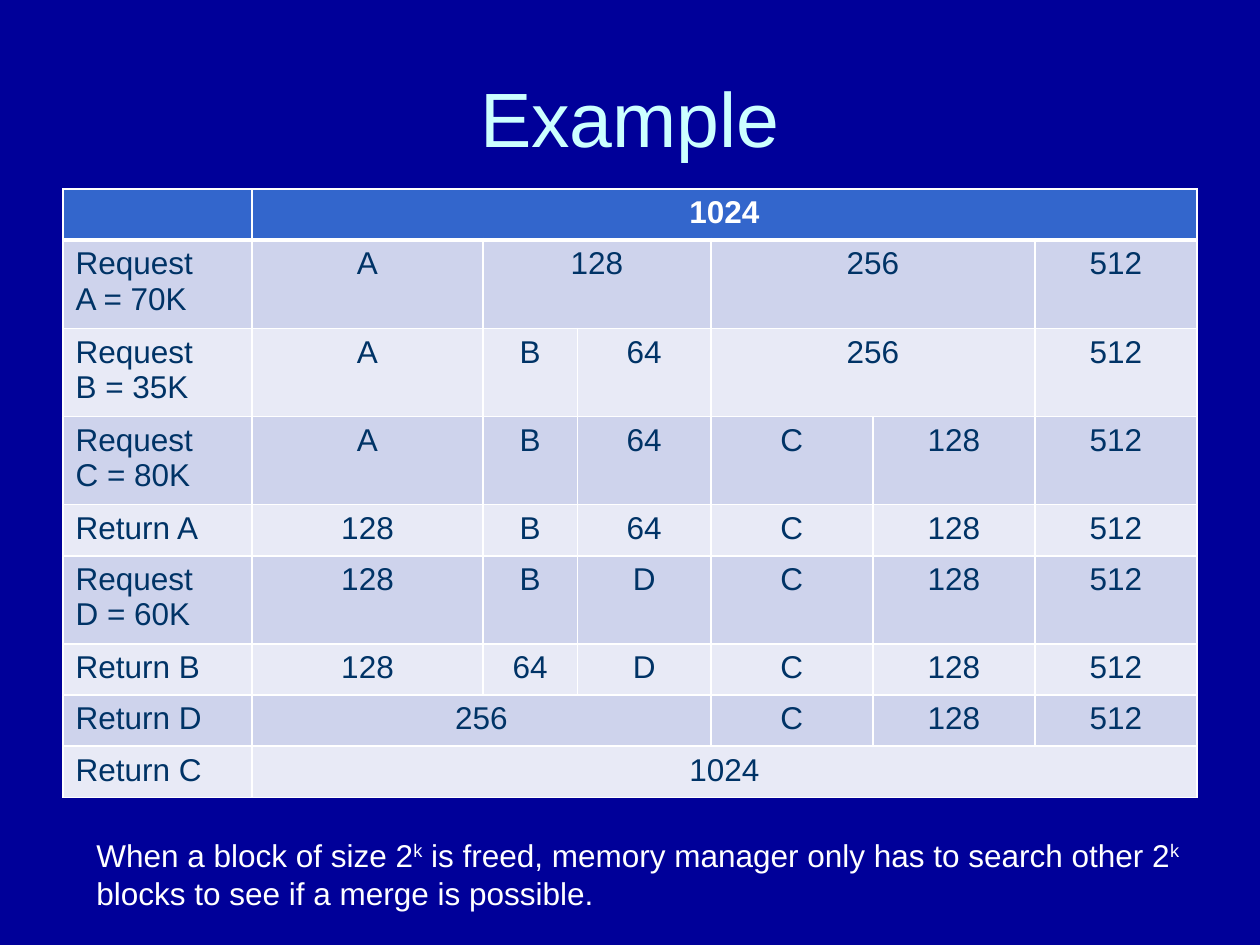
import pptx
import pptx.dml.color
import pptx.enum.text
import pptx.oxml
import pptx.oxml.ns
import pptx.util

Pt = pptx.util.Pt
RGBColor = pptx.dml.color.RGBColor
PP_ALIGN = pptx.enum.text.PP_ALIGN

NAVY = RGBColor(0x00, 0x00, 0x99)
PALE_CYAN = RGBColor(0xCC, 0xFF, 0xFF)
WHITE = RGBColor(0xFF, 0xFF, 0xFF)
HEADER_BLUE = RGBColor(0x33, 0x66, 0xCC)
DARK_BAND = RGBColor(0xCE, 0xD3, 0xEC)
LIGHT_BAND = RGBColor(0xE8, 0xEA, 0xF6)
INK = RGBColor(0x00, 0x33, 0x66)

FONT = "Arial"
COLUMN_WIDTHS = [108, 132, 54, 76.2, 92.6, 92.6, 92.6]
SHORT_ROW = 29.2
TALL_ROW = 50.4

MEMORY_STATES = [
    ([], [("1024", 6)]),
    (["Request", "A = 70K"], [("A", 1), ("128", 2), ("256", 2), ("512", 1)]),
    (["Request", "B = 35K"], [("A", 1), ("B", 1), ("64", 1), ("256", 2), ("512", 1)]),
    (["Request", "C = 80K"], [("A", 1), ("B", 1), ("64", 1), ("C", 1), ("128", 1), ("512", 1)]),
    (["Return A"], [("128", 1), ("B", 1), ("64", 1), ("C", 1), ("128", 1), ("512", 1)]),
    (["Request", "D = 60K"], [("128", 1), ("B", 1), ("D", 1), ("C", 1), ("128", 1), ("512", 1)]),
    (["Return B"], [("128", 1), ("64", 1), ("D", 1), ("C", 1), ("128", 1), ("512", 1)]),
    (["Return D"], [("256", 3), ("C", 1), ("128", 1), ("512", 1)]),
    (["Return C"], [("1024", 6)]),
]

NOTE_RUNS = [
    ("When a block of size 2", False),
    ("k", True),
    (" is freed, memory manager only has to search other 2", False),
    ("k", True),
    (" blocks to see if a merge is possible.", False),
]


def add_run(paragraph, text, size, color, bold=False):
    run = paragraph.add_run()
    run.text = text
    run.font.name = FONT
    run.font.size = Pt(size)
    run.font.bold = bold
    run.font.color.rgb = color
    return run


def write_cell(cell, lines, alignment, color, bold):
    for index, line in enumerate(lines):
        frame = cell.text_frame
        paragraph = frame.paragraphs[0] if index == 0 else frame.add_paragraph()
        paragraph.alignment = alignment
        add_run(paragraph, line, 18, color, bold)


def style_cell(cell, fill, top, bottom):
    properties = cell._tc.get_or_add_tcPr()
    for side, width in (("L", 1), ("R", 1), ("T", top), ("B", bottom)):
        properties.append(pptx.oxml.parse_xml(
            f'<a:ln{side} {pptx.oxml.ns.nsdecls("a")} w="{Pt(width)}">'
            f'<a:solidFill><a:srgbClr val="{WHITE}"/></a:solidFill></a:ln{side}>'))
    cell.fill.solid()
    cell.fill.fore_color.rgb = fill


def place_title(slide, left, top, width, height):
    title = slide.shapes.title
    title.left, title.top, title.width, title.height = left, top, width, height
    title.text_frame.vertical_anchor = pptx.enum.text.MSO_ANCHOR.MIDDLE
    paragraph = title.text_frame.paragraphs[0]
    paragraph.alignment = PP_ALIGN.CENTER
    add_run(paragraph, "Example", 44, PALE_CYAN)


def place_memory_table(slide, left, top, width, height):
    shape = slide.shapes.add_table(
        len(MEMORY_STATES), len(COLUMN_WIDTHS), left, top, width, height)
    table = shape.table
    for column, column_width in zip(table.columns, COLUMN_WIDTHS):
        column.width = Pt(column_width)
    for row_index, (label, blocks) in enumerate(MEMORY_STATES):
        is_header = row_index == 0
        row = table.rows[row_index]
        row.height = Pt(TALL_ROW if len(label) > 1 else SHORT_ROW)
        fill = HEADER_BLUE if is_header else DARK_BAND if row_index % 2 else LIGHT_BAND
        for cell in row.cells:
            style_cell(cell, fill, 3 if row_index == 1 else 1, 3 if is_header else 1)
        color = WHITE if is_header else INK
        write_cell(table.cell(row_index, 0), label, PP_ALIGN.LEFT, color, is_header)
        column_index = 1
        for text, span in blocks:
            cell = table.cell(row_index, column_index)
            if span > 1:
                cell.merge(table.cell(row_index, column_index + span - 1))
            write_cell(cell, [text], PP_ALIGN.CENTER, color, is_header)
            column_index += span


def place_note(slide, left, top, width, height):
    frame = slide.shapes.add_textbox(left, top, width, height).text_frame
    frame.word_wrap = True
    frame.auto_size = pptx.enum.text.MSO_AUTO_SIZE.SHAPE_TO_FIT_TEXT
    for text, is_superscript in NOTE_RUNS:
        run = add_run(frame.paragraphs[0], text, 18, WHITE)
        if is_superscript:
            run.font._element.set("baseline", "30000")


def main():
    presentation = pptx.Presentation()
    presentation.slide_width = Pt(720)
    presentation.slide_height = Pt(540)
    slide = presentation.slides.add_slide(presentation.slide_layouts[5])
    slide.background.fill.solid()
    slide.background.fill.fore_color.rgb = NAVY
    place_title(slide, Pt(36), Pt(21.6), Pt(648), Pt(90))
    place_memory_table(slide, Pt(36), Pt(108), Pt(648), Pt(347.6))
    place_note(slide, Pt(48), Pt(474), Pt(636), Pt(51))
    presentation.save("out.pptx")


if __name__ == "__main__":
    main()
